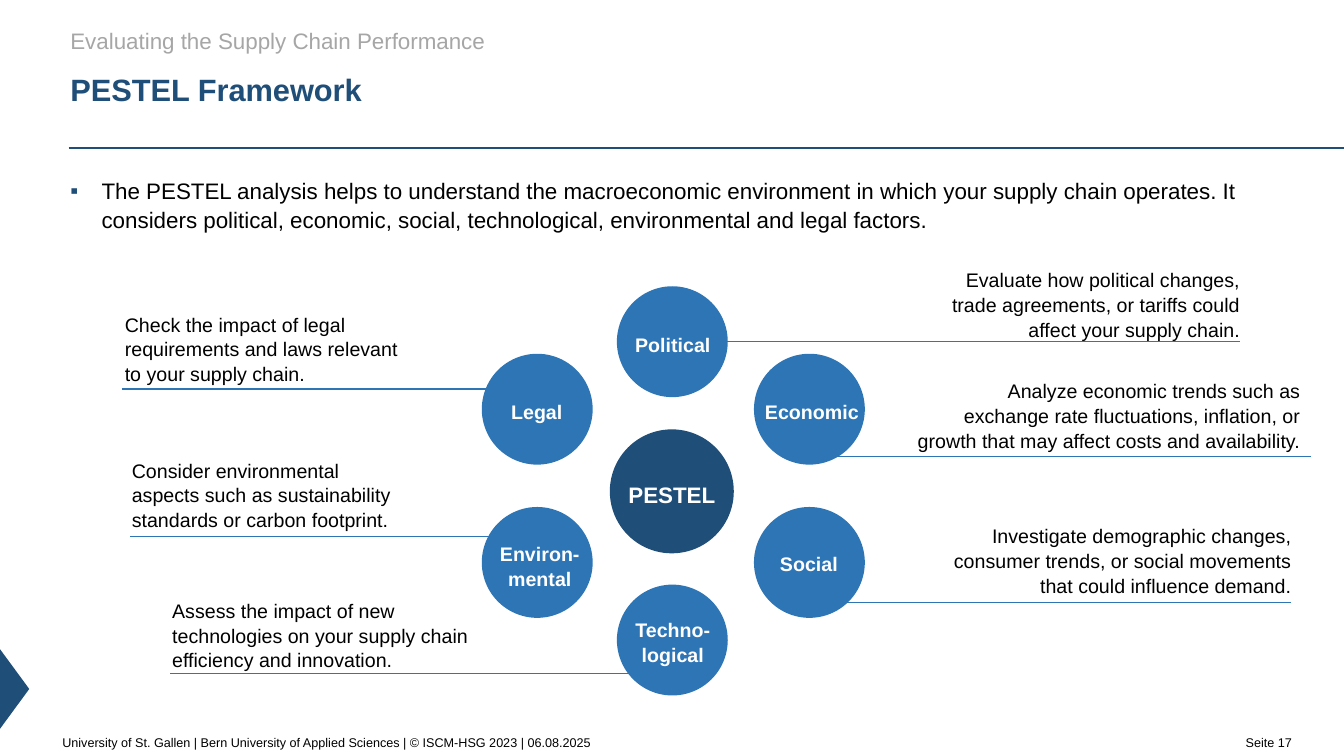
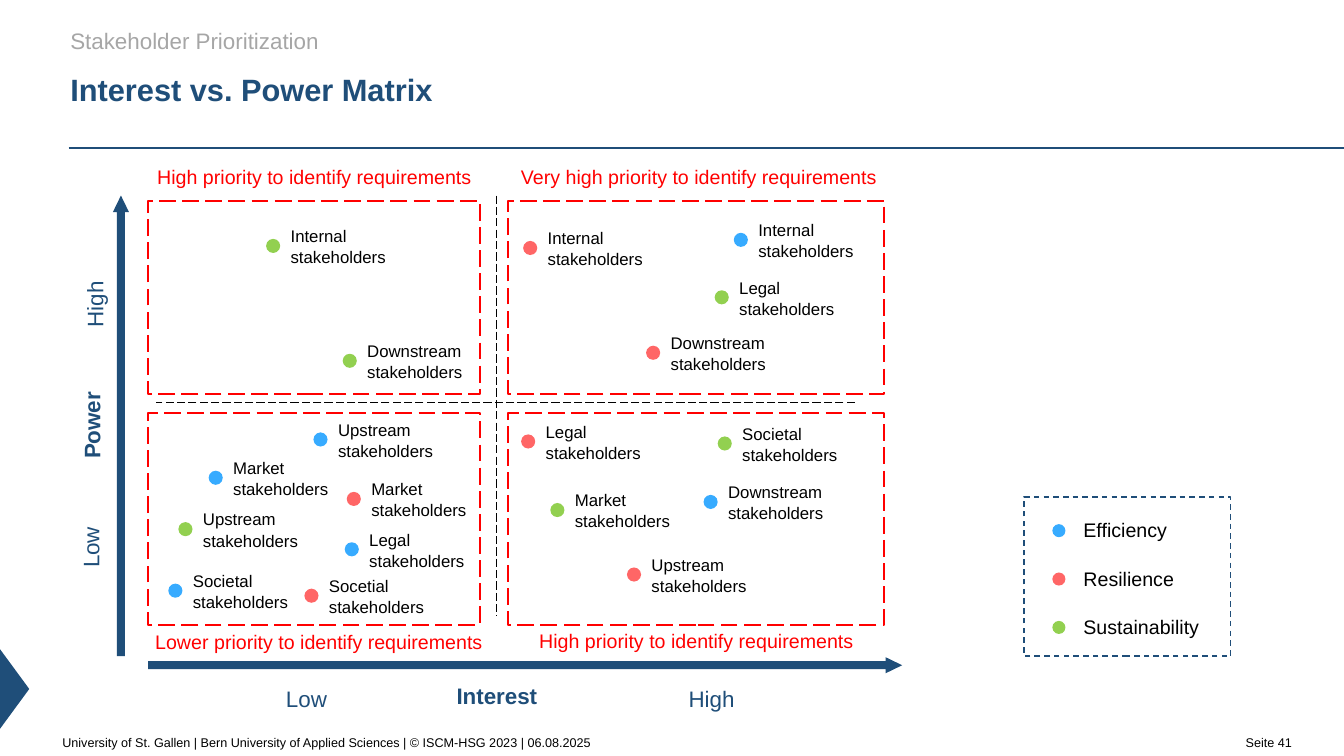
"""Build two supply chain slides: the PESTEL framework and the stakeholder matrix."""
from dataclasses import dataclass

from lxml import etree
from pptx import Presentation
from pptx.dml.color import RGBColor
from pptx.enum.dml import MSO_LINE
from pptx.enum.shapes import MSO_CONNECTOR, MSO_SHAPE
from pptx.enum.text import MSO_ANCHOR, PP_ALIGN
from pptx.oxml.ns import qn
from pptx.util import Inches, Pt

LEFT, CENTER, RIGHT = PP_ALIGN.LEFT, PP_ALIGN.CENTER, PP_ALIGN.RIGHT
TOP, MIDDLE = MSO_ANCHOR.TOP, MSO_ANCHOR.MIDDLE
OVAL, RECT, TRIANGLE = MSO_SHAPE.OVAL, MSO_SHAPE.RECTANGLE, MSO_SHAPE.ISOSCELES_TRIANGLE
UP_ARROW, RIGHT_ARROW = MSO_SHAPE.UP_ARROW, MSO_SHAPE.RIGHT_ARROW
STRAIGHT = MSO_CONNECTOR.STRAIGHT
DASH, LONG_DASH = MSO_LINE.DASH, MSO_LINE.LONG_DASH

CELL = Inches(0.1)
COLS, ROWS = 133.33, 75


@dataclass(frozen=True)
class Theme:
    font: str = "Arial"
    navy: str = "1F4E79"
    blue: str = "2E75B6"
    grey: str = "A6A6A6"
    black: str = "000000"
    white: str = "FFFFFF"
    red: str = "FF0000"
    efficiency: str = "37ABFF"
    resilience: str = "FF6666"
    sustainability: str = "92D050"
    title: int = 22
    body: int = 16
    label: int = 14
    small: int = 12
    footer: int = 9
    spacing: float = 1.05


T = Theme()
FOOTER = ("University of St. Gallen | Bern University of Applied Sciences | "
          "© ISCM-HSG 2023 | 06.08.2025")


def grid(*cells):
    return [round(c * CELL) for c in cells]


def rgb(color):
    return RGBColor.from_string(color)


def add_bullet(p, char, color, indent):
    pPr = p._p.get_or_add_pPr()
    pPr.set("marL", str(indent))
    pPr.set("indent", str(-indent))
    clr = etree.SubElement(pPr, qn("a:buClr"))
    etree.SubElement(clr, qn("a:srgbClr"), val=color)
    etree.SubElement(pPr, qn("a:buFont"), typeface=T.font)
    etree.SubElement(pPr, qn("a:buChar"), char=char)


class Deck:
    def __init__(self):
        self.prs = Presentation()
        self.prs.slide_width, self.prs.slide_height = grid(COLS, ROWS)
        self.s = None

    def slide(self, topic, title, page):
        self.s = self.prs.slides.add_slide(self.prs.slide_layouts[6])
        self.text(FOOTER, 5.2, 72.3, 108.7, 2.7, size=T.footer, anchor=MIDDLE)
        self.text(f"Seite {page}", 12.26 * 10, 72.3, 7.9, 2.7, size=T.footer, anchor=MIDDLE)
        self.line(6.8, 14.7, COLS, 14.7, color=T.navy, width=1.5)
        self.shape(TRIANGLE, -2.5, 66.9, 7.9, 2.9, fill=T.navy, rotation=90)
        self.text(topic, 6, 2.1, 122, 3.9, color=T.grey)
        self.text(title, 6, 6.3, 122, 8.4, size=T.title, color=T.navy, bold=True)

    def text(self, text, x, y, w, h, *, size=T.body, color=T.black, bold=False,
             align=LEFT, anchor=TOP, rotation=0, bullet=None):
        sp = self.s.shapes.add_textbox(*grid(x, y, w, h))
        sp.rotation = rotation
        tf = sp.text_frame
        tf.word_wrap = True
        tf.vertical_anchor = anchor
        for i, content in enumerate(text.split("\n")):
            p = tf.add_paragraph() if i else tf.paragraphs[0]
            if bullet:
                add_bullet(p, bullet, T.navy, Inches(0.31))
            p.alignment = align
            p.line_spacing = T.spacing
            r = p.add_run()
            r.text = content
            r.font.name, r.font.size, r.font.bold = T.font, Pt(size), bold
            r.font.color.rgb = rgb(color)

    def shape(self, kind, x, y, w, h, *, fill=None, outline=None, width=1,
              dash=None, rotation=0, adjust=()):
        sp = self.s.shapes.add_shape(kind, *grid(x, y, w, h))
        sp.shadow.inherit = False
        sp.rotation = rotation
        for i, value in enumerate(adjust):
            sp.adjustments[i] = value
        if fill:
            sp.fill.solid()
            sp.fill.fore_color.rgb = rgb(fill)
        else:
            sp.fill.background()
        if outline:
            sp.line.color.rgb = rgb(outline)
            sp.line.width = Pt(width)
            sp.line.dash_style = dash
        else:
            sp.line.fill.background()

    def line(self, x1, y1, x2, y2, *, color=T.blue, width=1, dash=None):
        c = self.s.shapes.add_connector(STRAIGHT, *grid(x1, y1, x2, y2))
        c.line.color.rgb = rgb(color)
        c.line.width = Pt(width)
        if dash:
            c.line.dash_style = dash
        etree.SubElement(c._element.spPr, qn("a:effectLst"))

    def circle(self, x, y, d, fill):
        self.shape(OVAL, x, y, d, d, fill=fill)

    def axis_label(self, text, x, y, rotation=0, bold=False):
        self.text(text, x, y, 11, 4.2, color=T.navy, bold=bold, align=CENTER,
                  anchor=MIDDLE, rotation=rotation)

    def stakeholder(self, name, x, y, color):
        self.circle(x, y, 1.4, color)
        self.text(f"{name}\nstakeholders", x + 1.45, y - 1.4, 18, 4.2,
                  size=T.small, anchor=MIDDLE)


FACTORS = [
    ("Political", (61.2, 28.4), (-0.2, 4),
     "Evaluate how political changes, trade agreements, or tariffs could affect your "
     "supply chain.", (92.5, 26, 31.5, 8.7), (71.8, 123, 33.9)),
    ("Economic", (74.8, 35.1), (0, 4),
     "Analyze economic trends such as exchange rate fluctuations, inflation, or growth "
     "that may affect costs and availability.", (90, 37, 40, 7.9), (82.2, 130.1, 45.3)),
    ("Social", (74.8, 50.3), (-0.3, 3.8),
     "Investigate demographic changes, consumer trends, or social movements that could "
     "influence demand.", (92.4, 51.4, 36.7, 8.1), (79.8, 128.1, 59.8)),
    ("Techno-logical", (61.2, 58), (-0.2, 2.7),
     "Assess the impact of new technologies on your supply chain efficiency and "
     "innovation.", (16.1, 58.8, 32, 11), (16.9, 63.5, 66.8)),
    ("Environ-mental", (47.8, 50.3), (0, 2.9),
     "Consider environmental aspects such as sustainability standards or carbon "
     "footprint.", (12.1, 44.9, 28, 8.3), (12.9, 51.7, 53.2)),
    ("Legal", (47.8, 35.1), (-0.3, 4),
     "Check the impact of legal requirements and laws relevant to your supply chain.",
     (11.4, 30.4, 29.4, 8.3), (12.1, 51, 38.6)),
]

STAKEHOLDERS = {
    T.efficiency: [
        ("Internal", 72.8, 23.1), ("Downstream", 69.8, 49.1), ("Societal", 16.7, 57.9),
        ("Market", 20.7, 46.7), ("Legal", 34.2, 53.8), ("Upstream", 31.1, 42.9)],
    T.resilience: [
        ("Downstream", 64.1, 34.3), ("Internal", 51.9, 23.9), ("Upstream", 62.2, 56.3),
        ("Market", 34.4, 48.8), ("Legal", 51.7, 43.1), ("Socetial", 30.2, 58.4)],
    T.sustainability: [
        ("Legal", 70.9, 28.8), ("Societal", 71.2, 43.3), ("Market", 54.6, 49.9),
        ("Internal", 26.4, 23.7), ("Downstream", 34, 35.1), ("Upstream", 17.7, 51.8)],
}

QUADRANTS = [
    ("High priority", (14.7, 19.9, 32.9, 19.2), (14.6, 15.4, 33.2)),
    ("Very high priority", (50.4, 19.9, 37.3, 19.2), (48.2, 15.4, 42.3)),
    ("Lower priority", (14.7, 41, 32.9, 21), (14.4, 61.5, 34.5)),
    ("High priority", (50.4, 41, 37.3, 21), (50.8, 61.4, 36.6)),
]

AXIS_LABELS = [
    ("Interest", 43.8, 66.8, 0, True), ("Low", 24.9, 67.1, 0, False),
    ("High", 65.1, 67.1, 0, False), ("Power", 3.5, 40.1, 270, True),
    ("Low", 3.4, 52.2, 270, False), ("High", 3.8, 28.1, 270, False),
]

LEGEND = [("Efficiency", T.efficiency), ("Resilience", T.resilience),
          ("Sustainability", T.sustainability)]


def pestel_slide(deck):
    deck.slide("Evaluating the Supply Chain Performance", "PESTEL Framework", 17)
    deck.text("The PESTEL analysis helps to understand the macroeconomic environment in "
              "which your supply chain operates. It considers political, economic, social, "
              "technological, environmental and legal factors.",
              6, 17, 122, 49.6, bullet="▪")
    label = {"color": T.white, "bold": True, "align": CENTER}
    deck.circle(60.5, 42.6, 12.3, T.navy)
    deck.text("PESTEL", 60.9, 47.1, 11.5, 3.1, **label)
    for name, (x, y), (dx, dy), description, box, (x1, x2, rule_y) in FACTORS:
        deck.circle(x, y, 11, T.blue)
        deck.text(name, x + dx, y + dy, 11.5, 6.1, size=T.label, **label)
        deck.text(description, *box, size=T.label,
                  align=RIGHT if box[0] > COLS / 2 else LEFT)
        deck.line(x1, rule_y, x2, rule_y)


def matrix_slide(deck):
    deck.slide("Stakeholder Prioritization", "Interest vs. Power Matrix", 41)
    deck.shape(RIGHT_ARROW, 14.7, 65.2, 74.8, 1.6, fill=T.navy, adjust=(0.5, 1.03))
    deck.shape(UP_ARROW, 11.2, 19.4, 1.6, 45.7, fill=T.navy, adjust=(0.5, 1.03))
    for text, x, y, rotation, bold in AXIS_LABELS:
        deck.axis_label(text, x, y, rotation, bold)
    for ends in ((49.3, 19.4, 49.3, 61.1), (84.8, 39.9, 15.5, 39.9)):
        deck.line(*ends, color=T.black, width=0.75, dash=LONG_DASH)
    for color, entries in STAKEHOLDERS.items():
        for entry in entries:
            deck.stakeholder(*entry, color)
    for priority, box, (x, y, w) in QUADRANTS:
        deck.shape(RECT, *box, outline=T.red, width=1.5, dash=LONG_DASH)
        deck.text(f"{priority} to identify requirements", x, y, w, 4.2, size=T.label,
                  color=T.red, align=CENTER, anchor=MIDDLE)
    deck.shape(RECT, 101.6, 49.3, 20.5, 15.8, outline=T.navy, dash=DASH)
    for i, (text, color) in enumerate(LEGEND):
        y = 52 + 4.8 * i
        deck.circle(104.4, y, 1.3, color)
        deck.text(text, 106.5, y - 1.6, 13.7, 4.2, size=T.label, anchor=MIDDLE)


def main():
    deck = Deck()
    pestel_slide(deck)
    matrix_slide(deck)
    deck.prs.save("out.pptx")


if __name__ == "__main__":
    main()
